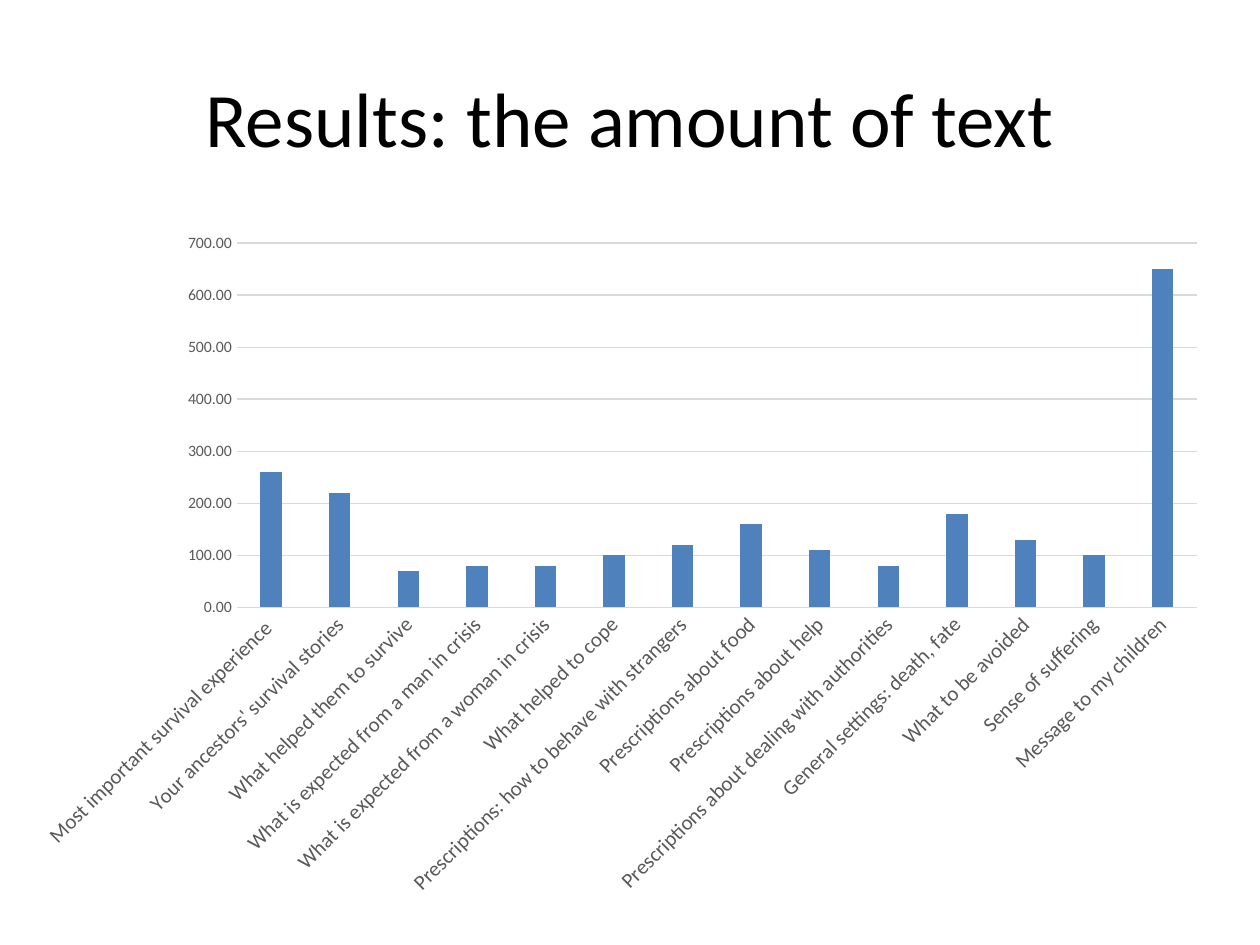
from lxml import etree
from pptx import Presentation
from pptx.chart.data import CategoryChartData
from pptx.dml.color import RGBColor
from pptx.enum.chart import XL_CHART_TYPE, XL_TICK_MARK
from pptx.enum.text import MSO_ANCHOR, PP_ALIGN
from pptx.oxml.ns import qn
from pptx.util import Inches, Pt

COLUMN = XL_CHART_TYPE.COLUMN_CLUSTERED
NO_TICK = XL_TICK_MARK.NONE
MIDDLE = MSO_ANCHOR.MIDDLE
CENTER = PP_ALIGN.CENTER

FONT = "Calibri"
GREY, PALE, BLUE = "595959", "D9D9D9", "4F81BD"
FRAME = (0.2, 1.75, 9.53, 5.46)
PLOT = (1.88, 1.93, 7.62, 2.89)
TITLE = "Results: the amount of text"
AMOUNTS = [
    ("Most important survival experience ", 260),
    ("Your ancestors' survival stories", 220),
    ("What helped them to survive", 70),
    ("What is expected from a man in crisis", 80),
    ("What is expected from a woman in crisis", 80),
    ("What helped to cope", 100),
    ("Prescriptions: how to behave with strangers", 120),
    ("Prescriptions about food", 160),
    ("Prescriptions about help", 110),
    ("Prescriptions about dealing with authorities", 80),
    ("General settings: death, fate", 180),
    ("What to be avoided", 130),
    ("Sense of suffering", 100),
    ("Message to my children", 650),
]


def paint(color, code):
    color.rgb = RGBColor.from_string(code)


def style(font, size, code):
    font.name, font.size, font.bold = FONT, Pt(size), False
    paint(font.color, code)


def rule(line):
    line.width = Pt(0.75)
    paint(line.color, PALE)


def place(chart):
    left, top, width, height = FRAME
    x, y, w, h = PLOT
    area = chart._chartSpace.chart.plotArea
    for old in area.findall(qn("c:layout")):
        area.remove(old)
    layout = etree.Element(qn("c:layout"))
    area.insert(0, layout)
    manual = etree.SubElement(layout, qn("c:manualLayout"))
    parts = {
        "layoutTarget": "inner", "xMode": "edge", "yMode": "edge",
        "x": (x - left) / width, "y": (y - top) / height,
        "w": w / width, "h": h / height,
    }
    for name, value in parts.items():
        etree.SubElement(manual, qn(f"c:{name}")).set("val", str(value))


def add_title(slide):
    title = slide.shapes.title
    title.left, title.top, title.width, title.height = map(Inches, (0.5, 0.3, 9, 1.25))
    frame = title.text_frame
    frame.word_wrap = True
    frame.vertical_anchor = MIDDLE
    para = frame.paragraphs[0]
    para.alignment = CENTER
    run = para.add_run()
    run.text = TITLE
    style(run.font, 44, "000000")


def add_bars(slide):
    names, values = zip(*AMOUNTS)
    data = CategoryChartData(number_format="#,##0.00")
    data.categories = names
    data.add_series("Series 1", values)
    chart = slide.shapes.add_chart(COLUMN, *map(Inches, FRAME), data).chart
    chart.has_title = chart.has_legend = False
    style(chart.font, 10, "000000")
    place(chart)

    plot = chart.plots[0]
    plot.gap_width, plot.overlap, plot.vary_by_categories = 219, -27, False
    fill = plot.series[0].format.fill
    fill.solid()
    paint(fill.fore_color, BLUE)

    cats, vals = chart.category_axis, chart.value_axis
    for axis, size in ((cats, 12), (vals, 9)):
        axis.major_tick_mark = axis.minor_tick_mark = NO_TICK
        style(axis.tick_labels.font, size, GREY)
    rule(cats.format.line)
    cats._element.txPr.bodyPr.set("rot", "-2700000")

    vals.minimum_scale, vals.maximum_scale, vals.major_unit = 0, 700, 100
    vals.tick_labels.number_format = "#,##0.00"
    vals.tick_labels.number_format_is_linked = False
    vals.format.line.fill.background()
    rule(vals.major_gridlines.format.line)


def main():
    deck = Presentation()
    deck.slide_width, deck.slide_height = Inches(10), Inches(7.5)
    slide = deck.slides.add_slide(deck.slide_layouts[5])
    add_title(slide)
    add_bars(slide)
    deck.save("out.pptx")


if __name__ == "__main__":
    main()
